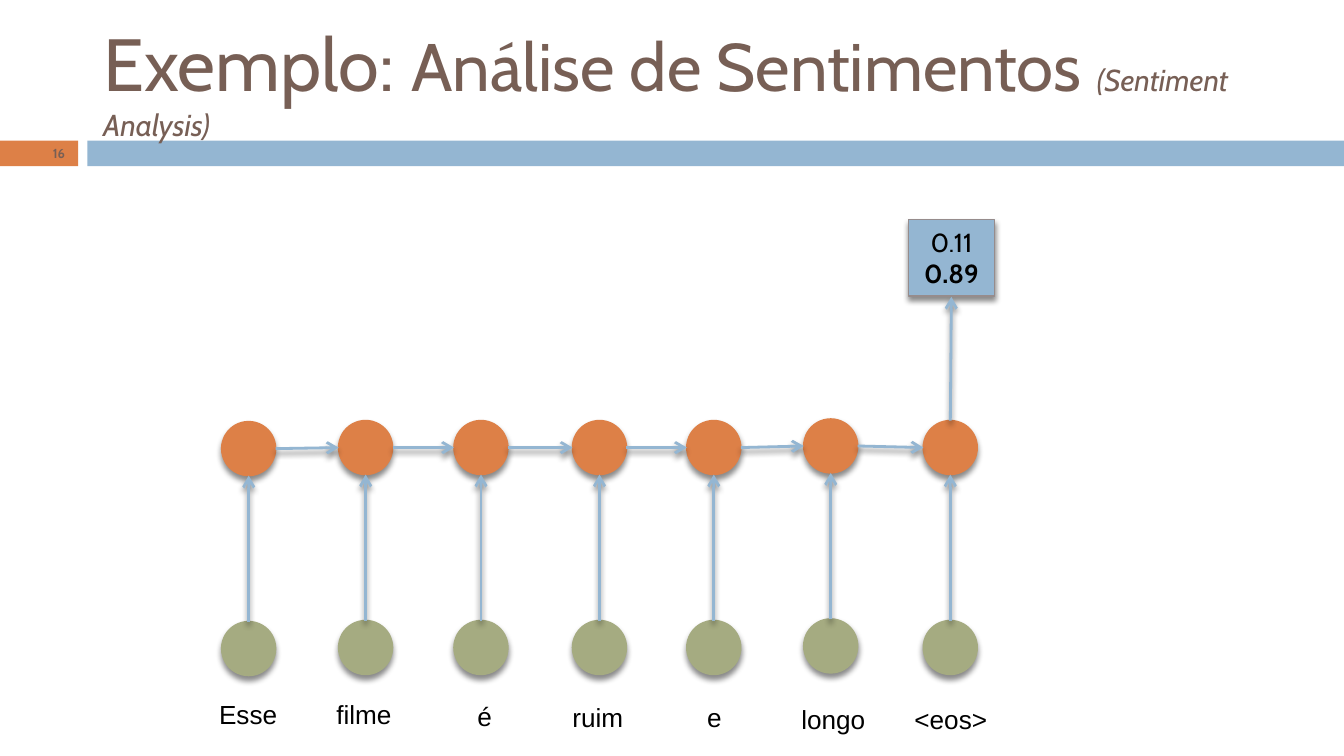
from lxml import etree
from pptx import Presentation
from pptx import util as u
from pptx.dml.color import RGBColor
from pptx.enum import shapes, text
from pptx.oxml import parse_xml
from pptx.oxml.ns import qn

ORANGE = RGBColor(0xDD, 0x80, 0x47)
BLUE = RGBColor(0x94, 0xB6, 0xD2)
GREEN = RGBColor(0xA5, 0xAB, 0x81)
BROWN = RGBColor(0x77, 0x5F, 0x55)
GREY = RGBColor(0x96, 0x8C, 0x8C)
BLACK = RGBColor(0, 0, 0)

SHADOW = (
    '<a:effectLst xmlns:a="http://schemas.openxmlformats.org/drawingml/2006/main">'
    '<a:outerShdw blurRad="38100" dist="30000" dir="5400000" rotWithShape="0">'
    '<a:srgbClr val="000000"><a:alpha val="45000"/></a:srgbClr>'
    '</a:outerShdw></a:effectLst>'
)


def write(sp, runs, color=BLACK, font="Cabin", align=text.PP_ALIGN.LEFT,
          anchor=text.MSO_ANCHOR.MIDDLE, wrap=True):
    """Fill sp with runs of (text, size, bold, italic)."""
    tf = sp.text_frame
    tf.word_wrap = wrap
    tf.vertical_anchor = anchor
    p = tf.paragraphs[0]
    p.alignment = align
    for words, size, bold, italic in runs:
        r = p.add_run()
        r.text = words
        r.font.name = font
        r.font.size = u.Pt(size)
        r.font.bold = bold
        r.font.italic = italic
        r.font.color.rgb = color


def add_block(kind, x, y, w, h, fill, line=None):
    """Add a filled shape; an outlined one also casts a shadow."""
    sp = s.shapes.add_shape(kind, u.Cm(x), u.Cm(y), u.Cm(w), u.Cm(h))
    sp.fill.solid()
    sp.fill.fore_color.rgb = fill
    if line is None:
        sp.line.fill.background()
        sp.shadow.inherit = False
    else:
        sp.line.color.rgb = line
        sp.line.width = u.Pt(0.79)
        sp._element.spPr.append(parse_xml(SHADOW))
    return sp


prs = Presentation()
prs.slide_width, prs.slide_height = u.Cm(25.4), u.Cm(14.29)
s = prs.slides.add_slide(prs.slide_layouts[6])
RECT, OVAL = shapes.MSO_SHAPE.RECTANGLE, shapes.MSO_SHAPE.OVAL

# Header bars with the slide number
sp = add_block(RECT, 0, 2.66, 1.48, 0.48, ORANGE)
write(sp, [("16", 7, True, False)], color=BROWN, align=text.PP_ALIGN.RIGHT)
add_block(RECT, 1.65, 2.66, 23.75, 0.48, BLUE)

# Title
sp = s.shapes.add_textbox(u.Cm(1.7), u.Cm(0.48), u.Cm(22.66), u.Cm(2.06))
write(sp, [("Exemplo: ", 39.6, False, False),
           ("Análise de Sentimentos ", 36, False, False),
           ("(Sentiment Analysis)", 16.2, False, True)], color=BROWN)

# One column per word: word, node centre x, hidden node centre y, label centre x, label top
columns = [
    ("Esse", 4.7, 8.48, 4.69, 13.08),
    ("filme", 6.91, 8.46, 6.88, 13.08),
    ("é", 9.09, 8.46, 9.16, 13.11),
    ("ruim", 11.33, 8.46, 11.3, 13.13),
    ("e", 13.49, 8.46, 13.5, 13.13),
    ("longo", 15.7, 8.43, 15.75, 13.18),
    ("<eos>", 17.96, 8.46, 17.97, 13.18),
]
D = 1.02        # node diameter
R = D / 2
DROP = 3.78     # from hidden node to input node
LABEL_W = 1.9

arrows = []
for word, x, y, label_x, label_y in columns:
    add_block(OVAL, x - R, y + DROP - R, D, D, GREEN, GREEN)
    add_block(OVAL, x - R, y - R, D, D, ORANGE, ORANGE)
    arrows.append((x, y + DROP - R, x, y + R))
    sp = s.shapes.add_textbox(u.Cm(label_x - LABEL_W / 2), u.Cm(label_y),
                              u.Cm(LABEL_W), u.Cm(0.86))
    write(sp, [(word, 14, False, False)], font="Arial", wrap=False,
          align=text.PP_ALIGN.CENTER, anchor=text.MSO_ANCHOR.TOP)

# Output box
sp = add_block(RECT, 17.17, 4.15, 1.63, 1.45, BLUE, GREY)
write(sp, [("0.11 ", 14, False, False), ("0.89", 14, True, False)],
      align=text.PP_ALIGN.CENTER)

# Arrows: input to hidden, hidden to next hidden, last hidden to output
for (_, x1, y1, *_), (_, x2, y2, *_) in zip(columns, columns[1:]):
    arrows.append((x1 + R, y1, x2 - R, y2))
arrows.append((17.96, 8.46 - R, 17.98, 5.61))

for ends in arrows:
    cx = s.shapes.add_connector(shapes.MSO_CONNECTOR.STRAIGHT, *map(u.Cm, ends))
    cx.line.color.rgb = BLUE
    cx.line.width = u.Pt(1.5)
    etree.SubElement(cx.line._get_or_add_ln(), qn("a:tailEnd"), type="arrow")
    cx._element.spPr.append(parse_xml(SHADOW))

prs.save("out.pptx")
